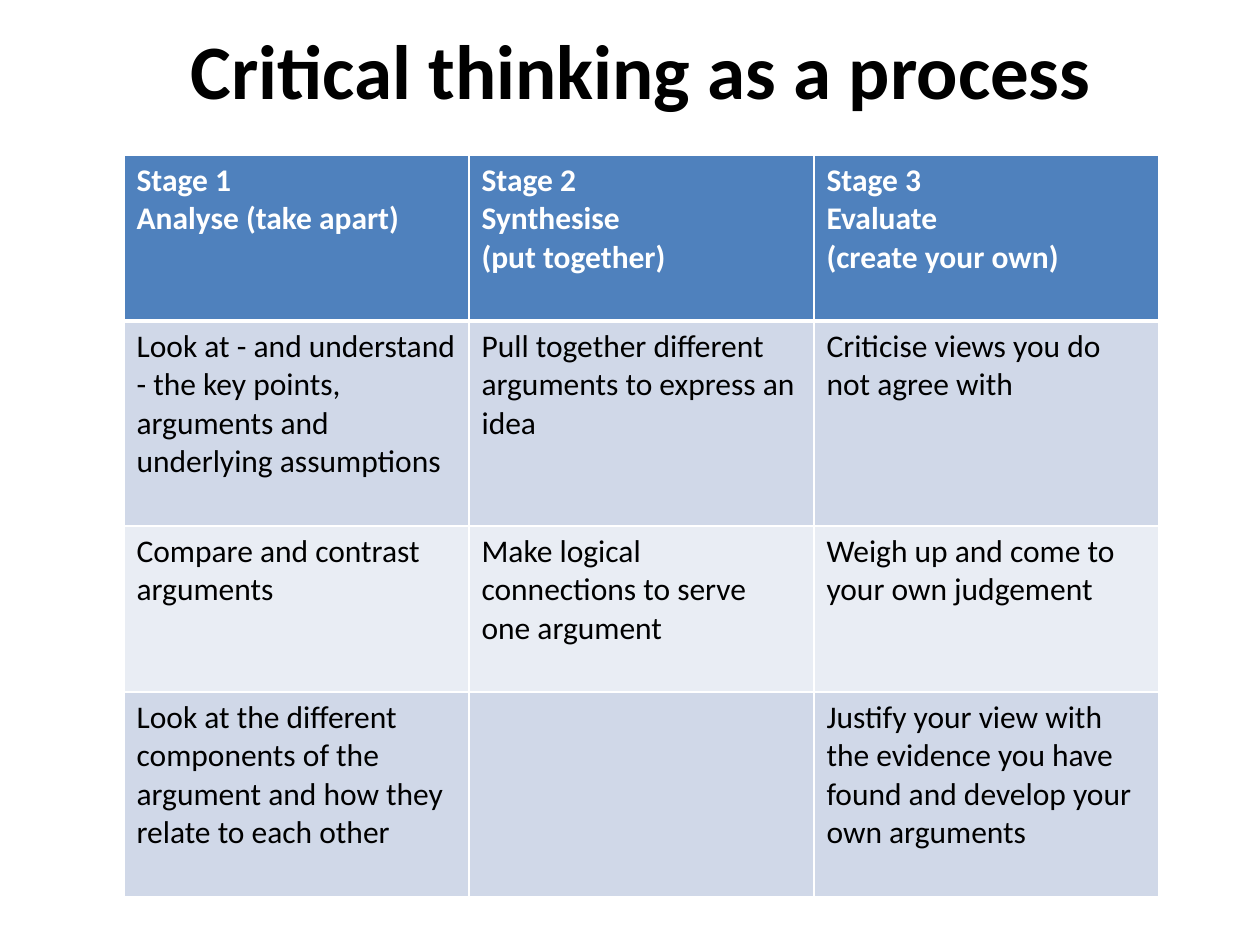
from lxml import etree
from pptx import Presentation
from pptx import util as u
from pptx.dml import color
from pptx.enum import text
from pptx.oxml import ns

SCALE = 914400 // 126
ROWS = [
    ["Stage 1\nAnalyse (take apart)",
     "Stage 2\nSynthesise\n(put together)",
     "Stage 3\nEvaluate\n(create your own)"],
    ["Look at - and understand - the key points, arguments and underlying assumptions",
     "Pull together different arguments to express an idea",
     "Criticise views you do not agree with"],
    ["Compare and contrast arguments",
     "Make logical connections to serve one argument",
     "Weigh up and come to your own judgement"],
    ["Look at the different components of the argument and how they relate to each other",
     "",
     "Justify your view with the evidence you have found and develop your own arguments"],
]


def px(n):
    return u.Emu(n * SCALE)


def rgb(code):
    return color.RGBColor.from_string(code)


def write(frame, words, size=18, ink="000000", bold=False, face="Calibri", align=None):
    frame.text = words
    for para in frame.paragraphs:
        para.alignment = align
        font = para.font
        font.size, font.bold, font.name = u.Pt(size), bold, face
        font.color.rgb = rgb(ink)
        for run in para.runs:
            run.font.size, run.font.bold, run.font.name = u.Pt(size), bold, face
            run.font.color.rgb = rgb(ink)


def edge(cell, sides):
    props = cell._tc.get_or_add_tcPr()
    for spot, (side, width) in enumerate(sides.items()):
        line = etree.Element(ns.qn("a:ln" + side), w=str(u.Pt(width)))
        fill = etree.SubElement(line, ns.qn("a:solidFill"))
        etree.SubElement(fill, ns.qn("a:srgbClr"), val="FFFFFF")
        props.insert(spot, line)


class Deck:
    head = "4F81BD"
    bands = ("E9EDF4", "D0D8E8")

    def __init__(self):
        self.file = Presentation()
        self.file.slide_width, self.file.slide_height = px(1260), px(945)
        self.slide = self.file.slides.add_slide(self.file.slide_layouts[5])

    def title(self, words, left, top, width, height):
        box = self.slide.shapes.title
        box.left, box.top, box.width, box.height = map(px, (left, top, width, height))
        write(box.text_frame, words, size=44, bold=True, align=text.PP_ALIGN.CENTER)
        box.text_frame.word_wrap = False
        box.text_frame.vertical_anchor = text.MSO_ANCHOR.TOP

    def table(self, rows, left, top, width, heights):
        frame = self.slide.shapes.add_table(
            len(rows), len(rows[0]), px(left), px(top), px(width), px(sum(heights)))
        grid = frame.table
        for r, (row, height) in enumerate(zip(rows, heights)):
            grid.rows[r].height = px(height)
            for c, words in enumerate(row):
                self.cell(grid.cell(r, c), words, r)

    def cell(self, cell, words, r):
        first = r == 0
        write(cell.text_frame, words, ink="FFFFFF" if first else "000000", bold=first)
        cell.fill.solid()
        cell.fill.fore_color.rgb = rgb(self.head if first else self.bands[r % 2])
        edge(cell, {"L": 1, "R": 1, "T": 3 if r == 1 else 1, "B": 3 if first else 1})


def main():
    deck = Deck()
    deck.title("Critical thinking as a process", 174, 16, 935, 106)
    deck.table(ROWS, 124, 155, 1035, [166, 205] * 2)
    deck.file.save("out.pptx")


if __name__ == "__main__":
    main()
